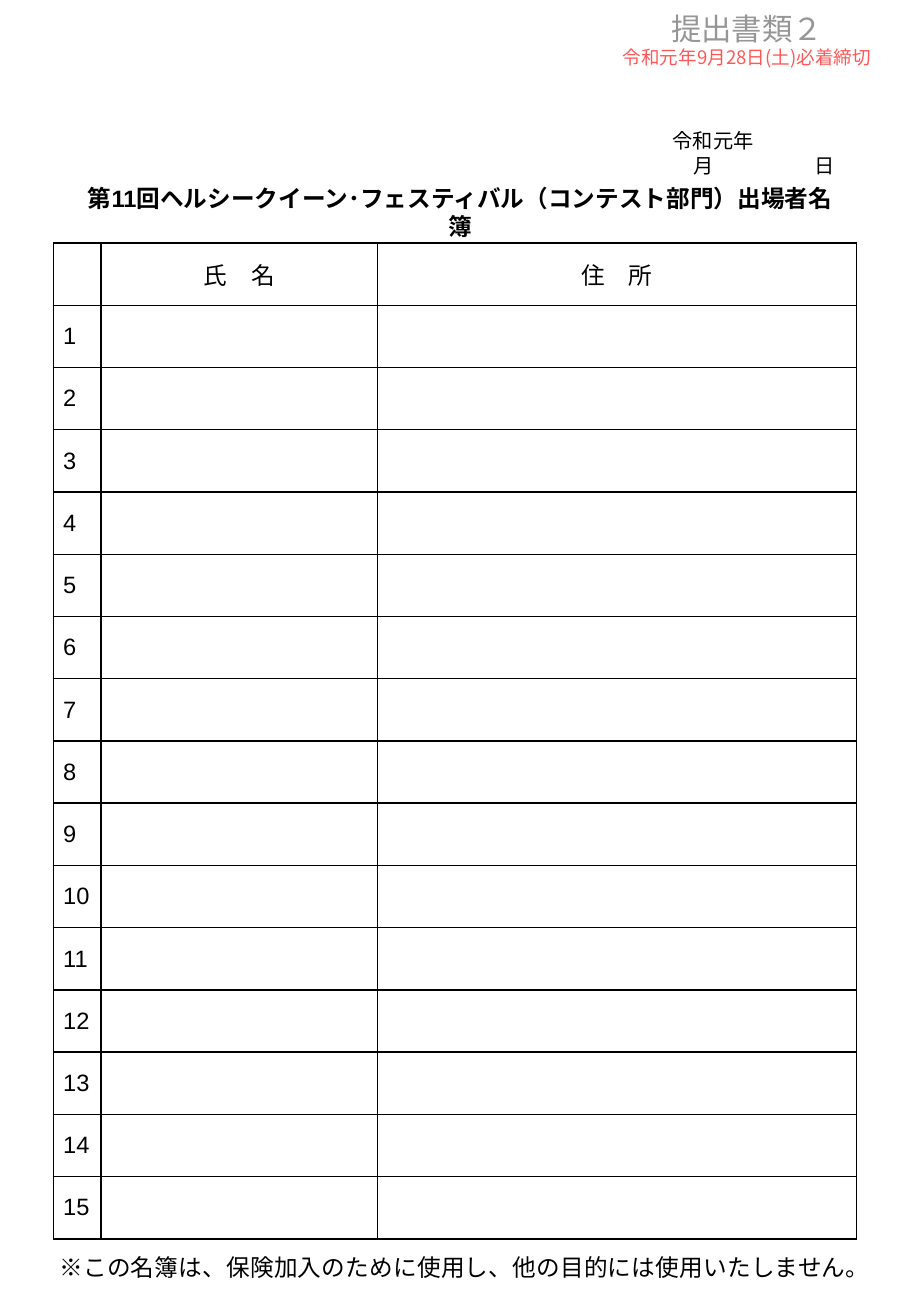
"""Build the contestant roster form as a one-page portrait slide."""
from dataclasses import dataclass

from lxml.etree import SubElement
from pptx import Presentation
from pptx.dml.color import RGBColor
from pptx.enum.lang import MSO_LANGUAGE_ID
from pptx.enum.text import MSO_ANCHOR, MSO_AUTO_SIZE, PP_ALIGN
from pptx.oxml.ns import qn
from pptx.util import Inches, Pt

BLACK = RGBColor(0x00, 0x00, 0x00)
GREY = RGBColor(0x96, 0x96, 0x96)
RED = RGBColor(0xFF, 0x57, 0x57)
LATIN, CJK = "Arial", "Noto Sans CJK JP"
ENTRIES = 15
TABLE_HEIGHT = 8.2
COLUMN_WIDTHS = (0.39, 2.28, 3.94)
HEADERS = ("", "氏　名", "住　所")


@dataclass(frozen=True)
class Line:
    text: str
    size: float = 14
    color: RGBColor = BLACK
    font: str = LATIN
    bold: bool = False
    align: PP_ALIGN = PP_ALIGN.LEFT
    stops: tuple[float, ...] = ()


@dataclass(frozen=True)
class Block:
    box: tuple[float, float, float, float]
    lines: tuple[Line, ...]
    insets: tuple[float, float] = (0.08, 0.01)


TITLE = Block((0.6, 1.46, 6.38, 0.33), (
    Line("第11回ヘルシークイーン･フェスティバル（コンテスト部門）出場者名簿",
         bold=True, align=PP_ALIGN.CENTER),), (0.1, 0.05))
BLOCKS = (
    Block((4.54, 1.01, 2.44, 0.3), (
        Line("\t令和元年", 12, stops=(0.9,)),
        Line("\t月\t日", 12, stops=(1.07, 2.07))), (0.1, 0.05)),
    Block((0.41, 10.3, 6.64, 0.25), (
        Line("※この名簿は、保険加入のために使用し、他の目的には使用いたしません。",
             font=CJK, align=PP_ALIGN.JUSTIFY),)),
    Block((4.85, 0.07, 2.6, 0.6), (
        Line("提出書類２", 18, GREY, CJK, align=PP_ALIGN.CENTER),
        Line("令和元年9月28日(土)必着締切", 11, RED, CJK, align=PP_ALIGN.CENTER))),
)


def write_line(p, line: Line) -> None:
    """Write one formatted line into a paragraph."""
    p.alignment = line.align
    p.space_before = Pt(0)
    if line.stops:
        tabs = SubElement(p._p.get_or_add_pPr(), qn("a:tabLst"))
        for stop in line.stops:
            SubElement(tabs, qn("a:tab"), pos=str(Inches(stop)), algn="l")
    r = p.add_run()
    r.text = line.text
    style = {"name": line.font, "size": Pt(line.size), "bold": line.bold,
             "language_id": MSO_LANGUAGE_ID.JAPANESE}
    for name, value in style.items():
        setattr(r.font, name, value)
    r.font.color.rgb = line.color
    SubElement(r._r.get_or_add_rPr(), qn("a:ea"), typeface=CJK)


def fill_block(sp, block: Block) -> None:
    """Place a text shape and write its lines."""
    for name, value in zip(("left", "top", "width", "height"), block.box):
        setattr(sp, name, Inches(value))
    side, edge = (Inches(value) for value in block.insets)
    tf = sp.text_frame
    settings = {"margin_left": side, "margin_right": side,
                "margin_top": edge, "margin_bottom": edge,
                "word_wrap": True, "vertical_anchor": MSO_ANCHOR.TOP,
                "auto_size": MSO_AUTO_SIZE.SHAPE_TO_FIT_TEXT}
    for name, value in settings.items():
        setattr(tf, name, value)
    for i, line in enumerate(block.lines):
        write_line(tf.add_paragraph() if i else tf.paragraphs[0], line)


def format_cell(cell) -> None:
    """Give a cell thin black borders, small margins and no fill."""
    settings = {"margin_left": Inches(0.08), "margin_right": Inches(0.08),
                "margin_top": Inches(0.01), "margin_bottom": Inches(0.01),
                "vertical_anchor": MSO_ANCHOR.MIDDLE}
    for name, value in settings.items():
        setattr(cell, name, value)
    for side in ("lnL", "lnR", "lnT", "lnB"):
        border = SubElement(cell._tc.get_or_add_tcPr(), qn(f"a:{side}"), w=str(Pt(1)))
        fill = SubElement(border, qn("a:solidFill"))
        SubElement(fill, qn("a:srgbClr"), val=str(BLACK))
    cell.fill.background()


def add_roster(s) -> None:
    """Add the numbered table for names and addresses."""
    rows = [HEADERS] + [(str(n), "", "") for n in range(1, ENTRIES + 1)]
    table = s.shapes.add_table(len(rows), len(HEADERS), Inches(0.44), Inches(2),
                               Inches(sum(COLUMN_WIDTHS)), Inches(TABLE_HEIGHT)).table
    table.first_row = table.horz_banding = False
    for column, width in zip(table.columns, COLUMN_WIDTHS):
        column.width = Inches(width)
    for i, texts in enumerate(rows):
        table.rows[i].height = Inches(TABLE_HEIGHT / len(rows))
        for j, text in enumerate(texts):
            cell = table.cell(i, j)
            format_cell(cell)
            if text:
                align = PP_ALIGN.LEFT if i else PP_ALIGN.CENTER
                write_line(cell.text_frame.paragraphs[0], Line(text, align=align))


def main() -> None:
    """Build and save the slide."""
    prs = Presentation()
    prs.slide_width, prs.slide_height = Inches(7.5), Inches(10.83)
    s = prs.slides.add_slide(prs.slide_layouts[5])
    add_roster(s)
    fill_block(s.shapes.title, TITLE)
    for block in BLOCKS:
        fill_block(s.shapes.add_textbox(*map(Inches, block.box)), block)
    prs.save("out.pptx")


if __name__ == "__main__":
    main()
